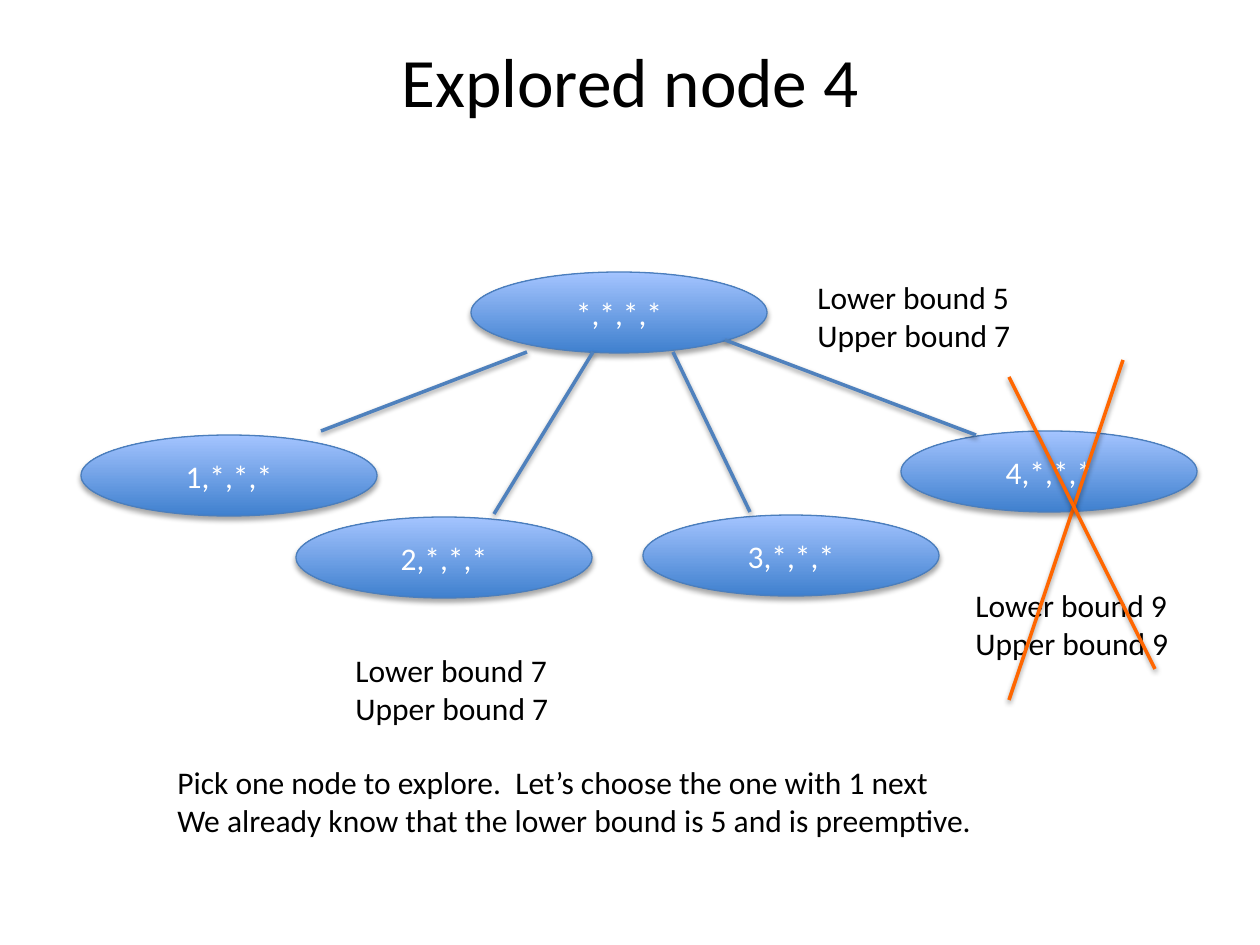
import dataclasses

import lxml.etree
import pptx
import pptx.dml.color
import pptx.enum.shapes
import pptx.enum.text
import pptx.oxml.ns
import pptx.util

PX = 914400 / 126


def emu(*lengths):
    return [pptx.util.Emu(round(length * PX)) for length in lengths]


def rgb(code):
    return pptx.dml.color.RGBColor.from_string(code)


@dataclasses.dataclass(frozen=True)
class Theme:
    font: str = "Calibri"
    ink: str = "000000"
    node_text: str = "FFFFFF"
    node_bottom: str = "3F80CE"
    node_top: str = "A4C4FF"
    node_outline: str = "4B7EBC"
    branch: str = "4F81BD"
    strike: str = "FF6600"
    title_size: float = 39.6
    body_size: float = 18


class TreeSlide:
    NODE_SIZE = (296, 81)

    def __init__(self, slide, theme):
        self.slide = slide
        self.theme = theme

    def add_lines(self, frame, lines, size, color, align, anchor):
        frame.vertical_anchor = anchor
        for number, line in enumerate(lines):
            paragraph = frame.paragraphs[0] if number == 0 else frame.add_paragraph()
            paragraph.alignment = align
            run = paragraph.add_run()
            run.text = line
            run.font.name = self.theme.font
            run.font.size = pptx.util.Pt(size)
            run.font.color.rgb = rgb(color)

    def drop_shadow(self, effects, distance, opacity):
        """Fill an effect list with a soft shadow falling straight down."""
        qn = pptx.oxml.ns.qn
        shadow = lxml.etree.SubElement(
            effects, qn("a:outerShdw"), blurRad=str(pptx.util.Pt(3.1)),
            dist=str(pptx.util.Pt(distance)), dir="5400000", rotWithShape="0")
        black = lxml.etree.SubElement(shadow, qn("a:srgbClr"), val="000000")
        lxml.etree.SubElement(black, qn("a:alpha"), val=str(opacity * 1000))

    def title(self, text, left, top, width, height):
        box = self.slide.shapes.add_textbox(*emu(left, top, width, height))
        box.text_frame.word_wrap = True
        box.text_frame.margin_top = 0
        self.add_lines(box.text_frame, [text], self.theme.title_size, self.theme.ink,
                       pptx.enum.text.PP_ALIGN.CENTER, pptx.enum.text.MSO_ANCHOR.TOP)

    def note(self, lines, left, top, width, height=89):
        box = self.slide.shapes.add_textbox(*emu(left, top, width, height))
        box.text_frame.word_wrap = False
        box.text_frame.auto_size = pptx.enum.text.MSO_AUTO_SIZE.SHAPE_TO_FIT_TEXT
        self.add_lines(box.text_frame, lines, self.theme.body_size, self.theme.ink,
                       pptx.enum.text.PP_ALIGN.LEFT, pptx.enum.text.MSO_ANCHOR.TOP)

    def bounds(self, lower, upper, left, top):
        self.note([f"Lower bound {lower}", f"Upper bound {upper}"], left, top, 219)

    def node(self, label, left, top):
        ellipse = self.slide.shapes.add_shape(
            pptx.enum.shapes.MSO_SHAPE.OVAL, *emu(left, top, *self.NODE_SIZE))
        ellipse.fill.gradient()
        ellipse.fill.gradient_angle = 90
        colors = (self.theme.node_bottom, self.theme.node_top)
        for stop, color in zip(ellipse.fill.gradient_stops, colors):
            stop.color.rgb = rgb(color)
        ellipse.line.color.rgb = rgb(self.theme.node_outline)
        ellipse.line.width = pptx.util.Pt(0.75)
        ellipse.shadow.inherit = False
        effects = ellipse.element.spPr.find(pptx.oxml.ns.qn("a:effectLst"))
        self.drop_shadow(effects, distance=1.8, opacity=35)
        self.add_lines(ellipse.text_frame, [label], self.theme.body_size,
                       self.theme.node_text, pptx.enum.text.PP_ALIGN.CENTER,
                       pptx.enum.text.MSO_ANCHOR.MIDDLE)

    def line(self, start, end, color):
        connector = self.slide.shapes.add_connector(
            pptx.enum.shapes.MSO_CONNECTOR.STRAIGHT, *emu(*start, *end))
        connector.line.color.rgb = rgb(color)
        connector.line.width = pptx.util.Pt(2)
        effects = lxml.etree.SubElement(
            connector.element.spPr, pptx.oxml.ns.qn("a:effectLst"))
        self.drop_shadow(effects, distance=1.6, opacity=38)


def main():
    deck = pptx.Presentation()
    deck.slide_width, deck.slide_height = emu(1260, 945)
    theme = Theme()
    tree = TreeSlide(deck.slides.add_slide(deck.slide_layouts[6]), theme)

    tree.title("Explored node 4", 63, 38, 1134, 157)

    nodes = [("*", 471, 272), ("3", 643, 515), ("4", 901, 431),
             ("2", 296, 517), ("1", 81, 435)]
    for first, left, top in nodes:
        tree.node(f"{first},*,*,*", left, top)

    branches = [((527, 352), (321, 431)), ((593, 352), (494, 514)),
                ((673, 352), (750, 512)), ((725, 340), (976, 435))]
    for start, end in branches:
        tree.line(start, end, theme.branch)

    tree.bounds(5, 7, 805, 272)
    tree.note(["Pick one node to explore.  Let’s choose the one with 1 next",
               "We already know that the lower bound is 5 and is preemptive."],
              165, 757, 823)
    tree.bounds(9, 9, 963, 580)
    tree.bounds(7, 7, 343, 645)

    for start, end in [((1123, 360), (1009, 700)), ((1009, 377), (1155, 669))]:
        tree.line(start, end, theme.strike)

    deck.save("out.pptx")


if __name__ == "__main__":
    main()
